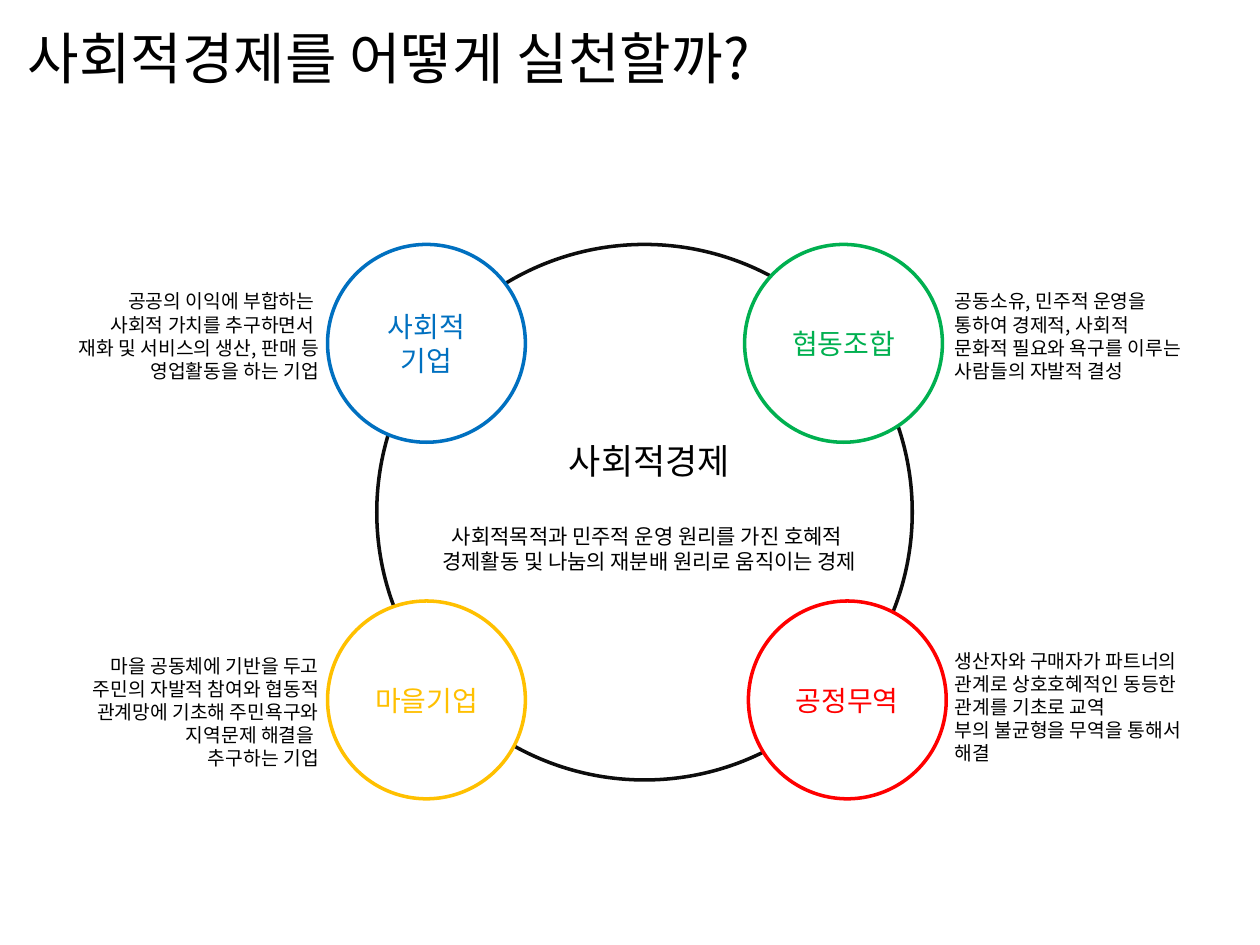
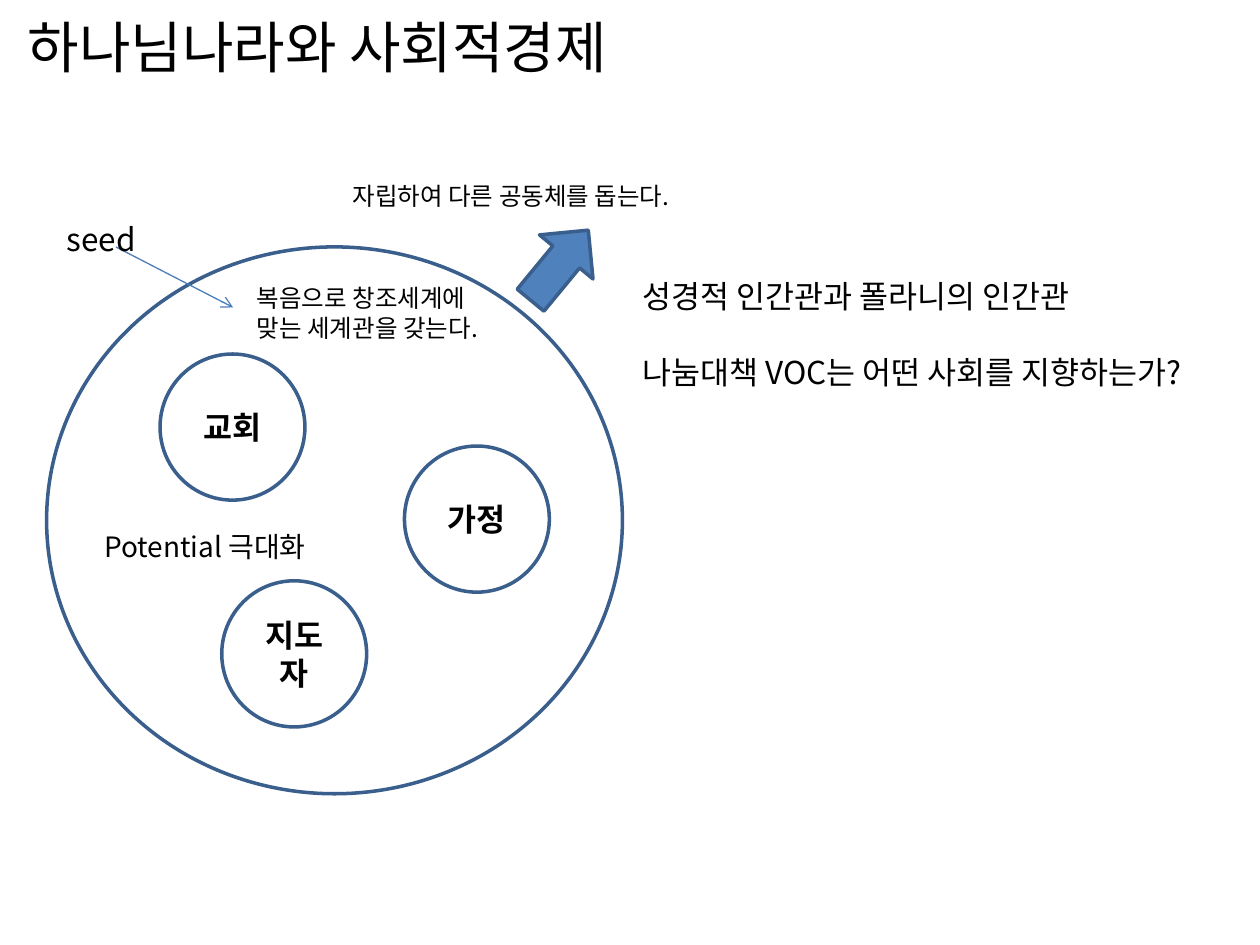
"""Build two slides on putting the social economy into practice."""
from lxml.etree import SubElement
from pptx import Presentation
from pptx.dml.color import RGBColor
from pptx.enum.shapes import MSO_CONNECTOR, MSO_SHAPE
from pptx.enum.text import MSO_ANCHOR, MSO_AUTO_SIZE, PP_ALIGN
from pptx.oxml.ns import qn
from pptx.util import Inches, Pt

FONT = "Noto Sans CJK KR"
LEFT, MID, RIGHT = PP_ALIGN.LEFT, PP_ALIGN.CENTER, PP_ALIGN.RIGHT
HUES = {
    "black": "000000", "white": "FFFFFF", "ring": "0D0D0D",
    "green": "00B050", "blue": "0070C0", "gold": "FFC000", "red": "FF0000",
    "edge": "3A5F8C", "arrow": "4F81BD", "line": "4B7EBC",
}
HUES = {name: RGBColor.from_string(code) for name, code in HUES.items()}


def write(shape, text, size, align=LEFT, hue="black", bold=False, anchor=MSO_ANCHOR.TOP):
    frame = shape.text_frame
    frame.text = text
    frame.word_wrap = True
    frame.auto_size = MSO_AUTO_SIZE.NONE
    frame.vertical_anchor = anchor
    for para in frame.paragraphs:
        para.alignment = align
        para.font.size = Pt(size)
        para.font.name = FONT
        para.font.bold = bold
        para.font.color.rgb = HUES[hue]
        for props in para._p.iter(qn("a:defRPr")):
            SubElement(props, qn("a:ea"), typeface=FONT)
    return frame.paragraphs


def draw(slide, kind, box, edge, fill=None):
    shape = slide.shapes.add_shape(kind, *map(Inches, box))
    shape.shadow.inherit = False
    shape.line.color.rgb = HUES[edge]
    shape.line.width = Pt(2)
    if fill:
        shape.fill.solid()
        shape.fill.fore_color.rgb = HUES[fill]
    else:
        shape.fill.background()
    return shape


deck = Presentation()
deck.slide_width, deck.slide_height = Inches(10), Inches(7.5)

slides = []
for text, top in (("사회적경제를 어떻게 실천할까?", 0.14), ("하나님나라와 사회적경제", 0.05)):
    slide = deck.slides.add_slide(deck.slide_layouts[5])
    title = slide.shapes.title
    title.left, title.top = Inches(0.12), Inches(top)
    title.width, title.height = Inches(9), Inches(1.25)
    write(title, text, 32)
    slides.append(slide)
ways, realm = slides

draw(ways, MSO_SHAPE.OVAL, (2.99, 1.94, 4.25, 4.25), "ring")
core = ways.shapes.add_textbox(Inches(2.99), Inches(3.44), Inches(4.33), Inches(1.18))
lines = write(core, "사회적경제\n사회적목적과 민주적 운영 원리를 가진 호혜적 \n"
              "경제활동 및 나눔의 재분배 원리로 움직이는 경제", 12, MID)
lines[0].font.size = Pt(20)
lines[1].space_before = Pt(24)

parts = [
    ("협동조합", "green", 5.91, 1.94, 7.48, 2.25, 0.84, LEFT,
     "공동소유, 민주적 운영을\n통하여 경제적, 사회적\n"
     "문화적 필요와 욕구를 이루는 사람들의 자발적 결성"),
    ("사회적\n기업", "blue", 2.6, 1.94, 0.39, 2.25, 0.84, RIGHT,
     "공공의 이익에 부합하는 \n사회적 가치를 추구하면서 \n"
     "재화 및 서비스의 생산, 판매 등 영업활동을 하는 기업"),
    ("마을기업", "gold", 2.6, 4.77, 0.39, 5.14, 1.03, RIGHT,
     "마을 공동체에 기반을 두고\n주민의 자발적 참여와 협동적\n"
     "관계망에 기초해 주민욕구와\n지역문제 해결을 \n추구하는 기업"),
    ("공정무역", "red", 5.94, 4.77, 7.48, 5.1, 1.21, LEFT,
     "생산자와 구매자가 파트너의 관계로 상호호혜적인 동등한 관계를 기초로 교역\n"
     "부의 불균형을 무역을 통해서\n해결"),
]
for name, hue, x, y, left, top, high, align, about in parts:
    disc = draw(ways, MSO_SHAPE.OVAL, (x, y, 1.57, 1.57), hue, "white")
    write(disc, name, 16, MID, hue, anchor=MSO_ANCHOR.MIDDLE)
    note = ways.shapes.add_textbox(Inches(left), Inches(top), Inches(2.24), Inches(high))
    write(note, about, 11, align)

draw(realm, MSO_SHAPE.OVAL, (0.37, 1.96, 4.57, 4.34), "edge")
for name, x, y in (("교회", 1.27, 2.81), ("지도자", 1.76, 4.61), ("가정", 3.21, 3.54)):
    disc = draw(realm, MSO_SHAPE.OVAL, (x, y, 1.15, 1.16), "edge")
    write(disc, name, 18, MID, bold=True, anchor=MSO_ANCHOR.MIDDLE)

seed = realm.shapes.add_connector(
    MSO_CONNECTOR.STRAIGHT, Inches(0.92), Inches(1.96), Inches(1.85), Inches(2.44))
seed.line.color.rgb = HUES["line"]
seed.line.width = Pt(0.75)
SubElement(seed.line._get_or_add_ln(), qn("a:tailEnd"), type="arrow")
SubElement(seed._element.spPr, qn("a:effectLst"))

arrow = draw(realm, MSO_SHAPE.RIGHT_ARROW, (4.08, 1.83, 0.72, 0.55), "edge", "arrow")
arrow.rotation = 309.5

notes = [
    ("Potential 극대화", 16, 0.73, 4.15, 2.18, 0.37),
    ("복음으로 창조세계에 맞는 세계관을 갖는다.", 14, 1.94, 2.2, 2.2, 0.57),
    ("seed", 18, 0.43, 1.7, 1.03, 0.31),
    ("자립하여 다른 공동체를 돕는다.", 14, 2.7, 1.39, 3.18, 0.34),
    ("성경적 인간관과 폴라니의 인간관\n나눔대책 VOC는 어떤 사회를 지향하는가?", 18, 5, 2.15, 4.84, 1.01),
]
for text, size, *box in notes:
    note = realm.shapes.add_textbox(*map(Inches, box))
    for para in write(note, text, size)[1:]:
        para.space_before = Pt(22)

deck.save("out.pptx")
